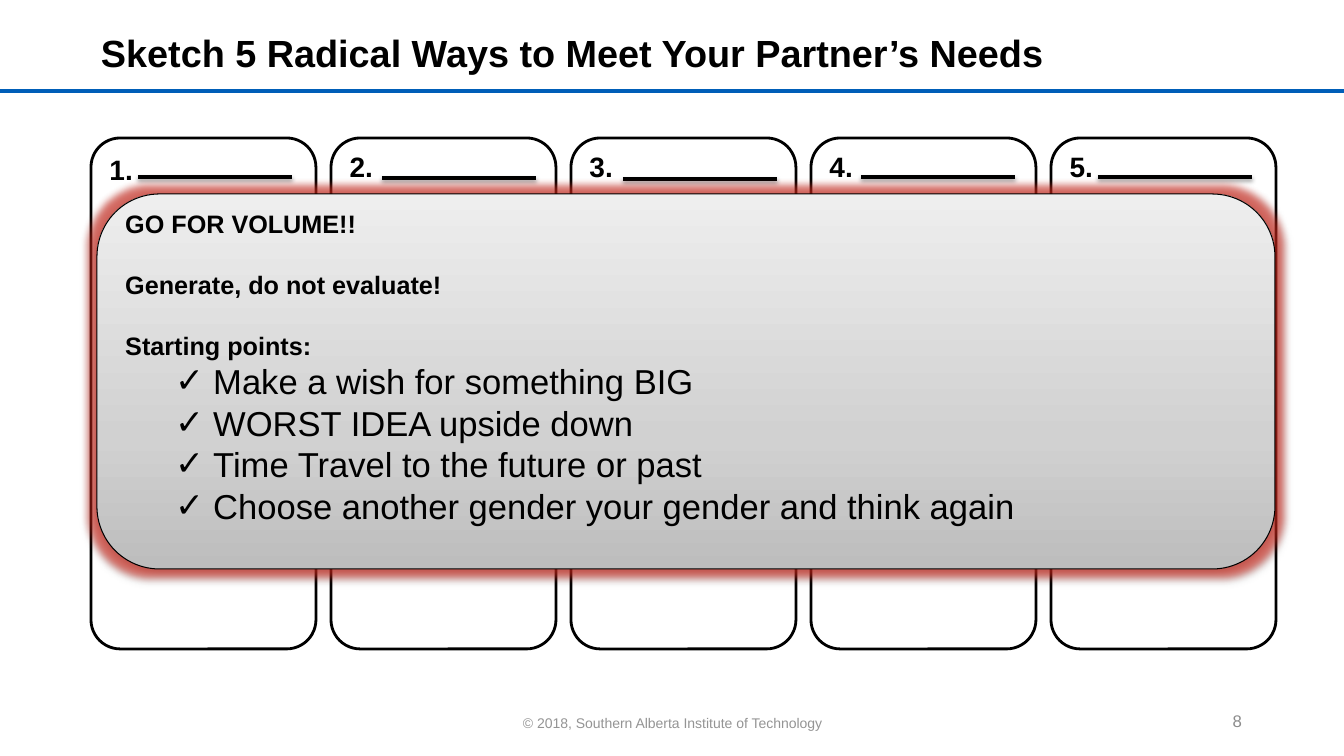
from copy import deepcopy
from lxml import etree
from pptx import Presentation
from pptx.dml.color import RGBColor
from pptx.enum.shapes import MSO_CONNECTOR as Link, MSO_SHAPE as Kind
from pptx.enum.text import MSO_ANCHOR as Anchor, PP_ALIGN as Align
from pptx.oxml import parse_xml
from pptx.oxml.ns import nsdecls, qn
from pptx.util import Emu, Pt

BLACK = RGBColor(0, 0, 0)
WHITE = RGBColor(255, 255, 255)
BLUE = RGBColor(0x00, 0x5E, 0xB8)
FOOT = RGBColor(0x94, 0x94, 0x94)
PAGE = RGBColor(0x8C, 0x8C, 0x8C)
DARK = RGBColor(0xBD, 0xBD, 0xBD)
MID = RGBColor(0xD1, 0xD1, 0xD1)
LIGHT = RGBColor(0xEE, 0xEE, 0xEE)
RED = RGBColor(0xDA, 0x29, 0x1C)
SCALE = 914400 / 100.8


def px(*nums):
    return [Emu(round(n * SCALE)) for n in nums]


def write(frame, lines, size, color=BLACK, bold=False, align=Align.LEFT,
          anchor=Anchor.MIDDLE, inset=(10, 5, 10, 5), gap=0, mark=None, more=False):
    frame.word_wrap = True
    frame.vertical_anchor = anchor
    (frame.margin_left, frame.margin_top,
     frame.margin_right, frame.margin_bottom) = px(*inset)
    for i, line in enumerate(lines):
        para = frame.add_paragraph() if i or more else frame.paragraphs[0]
        if mark:
            props = para._p.get_or_add_pPr()
            indent, hang = px(88, -38)
            props.set("marL", str(indent))
            props.set("indent", str(hang))
            etree.SubElement(props, qn("a:buFont")).set("typeface", "Arial")
            etree.SubElement(props, qn("a:buChar")).set("char", mark)
        para.alignment = align
        if i and gap:
            para.space_before = Pt(gap)
        run = para.add_run()
        run.text = line
        font = run.font
        font.name, font.size, font.bold = "Arial", Pt(size), bold
        font.color.rgb = color


deck = Presentation()
deck.slide_width, deck.slide_height = px(1344, 756)
slide = deck.slides.add_slide(deck.slide_layouts[5])
shapes = slide.shapes

# Title and rule
title = shapes.title
title.left, title.top, title.width, title.height = px(91, 17, 1057, 70)
write(title.text_frame, ["Sketch 5 Radical Ways to Meet Your Partner’s Needs"], 27, bold=True)
rule = shapes.add_shape(Kind.RECTANGLE, *px(0, 89, 1344, 4))
rule.shadow.inherit = False
rule.fill.solid()
rule.fill.fore_color.rgb = BLUE
rule.line.fill.background()

# Footer and page number
foot = shapes.add_textbox(*px(447, 709, 451, 27))
write(foot.text_frame, ["© 2018, Southern Alberta Institute of Technology"], 10,
      color=FOOT, align=Align.CENTER)
page = shapes.add_textbox(*px(950, 701, 302, 40))
write(page.text_frame, ["8"], 12, color=PAGE, align=Align.RIGHT)

# Five numbered cards
for i in range(5):
    card = shapes.add_shape(Kind.ROUNDED_RECTANGLE, *px(91 + 240 * i, 138, 225, 511))
    card.adjustments[0] = 0.13
    card.shadow.inherit = False
    card.fill.solid()
    card.fill.fore_color.rgb = WHITE
    card.line.color.rgb = BLACK
    card.line.width = Pt(2)
    write(card.text_frame, [f"{i + 1}."], 20, bold=True, anchor=Anchor.TOP,
          inset=(10, 3 if i else 6, 10, 5))

# Blank lines to write on
SHADE = ('<a:outerShdw blurRad="39370" dist="{}" dir="5400000" rotWithShape="0">'
         '<a:srgbClr val="000000"><a:alpha val="{}"/></a:srgbClr></a:outerShdw>')
EFFECT = "<a:effectLst " + nsdecls("a") + ">{}</a:effectLst>"
for x, y in [(138, 177), (382, 178), (623, 179), (861, 177), (1098, 177)]:
    blank = shapes.add_connector(Link.STRAIGHT, *px(x, y, x + 154, y))
    blank.line.color.rgb = BLACK
    blank.line.width = Pt(3)
    blank._element.spPr.append(parse_xml(EFFECT.format(SHADE.format(22860, 35000))))

# Glowing panel
panel = shapes.add_shape(Kind.ROUNDED_RECTANGLE, *px(97, 194, 1178, 375))
panel.fill.gradient()
panel.fill.gradient_angle = 90
first = panel.fill.gradient_stops[0]._gs
first.addnext(deepcopy(first))
for stop, (pos, tone) in zip(panel.fill.gradient_stops,
                             [(0, DARK), (0.35, MID), (1, LIGHT)]):
    stop.position = pos
    stop.color.rgb = tone
panel.line.color.rgb = BLACK
panel.line.width = Pt(0.75)
glow = f'<a:glow rad="139700"><a:srgbClr val="{RED}"><a:alpha val="60000"/></a:srgbClr></a:glow>'
panel._element.spPr.append(parse_xml(EFFECT.format(glow + SHADE.format(20320, 38000))))

# Panel text
pad = (10, 0, 10, 29)
write(panel.text_frame, ["GO FOR VOLUME!!", "Generate, do not evaluate!", "Starting points:"],
      18, bold=True, gap=22, inset=pad)
write(panel.text_frame, ["Make a wish for something BIG", "WORST IDEA upside down",
                         "Time Travel to the future or past",
                         "Choose another gender your gender and think again"],
      24.7, mark="✓", more=True, inset=pad)

deck.save("out.pptx")
